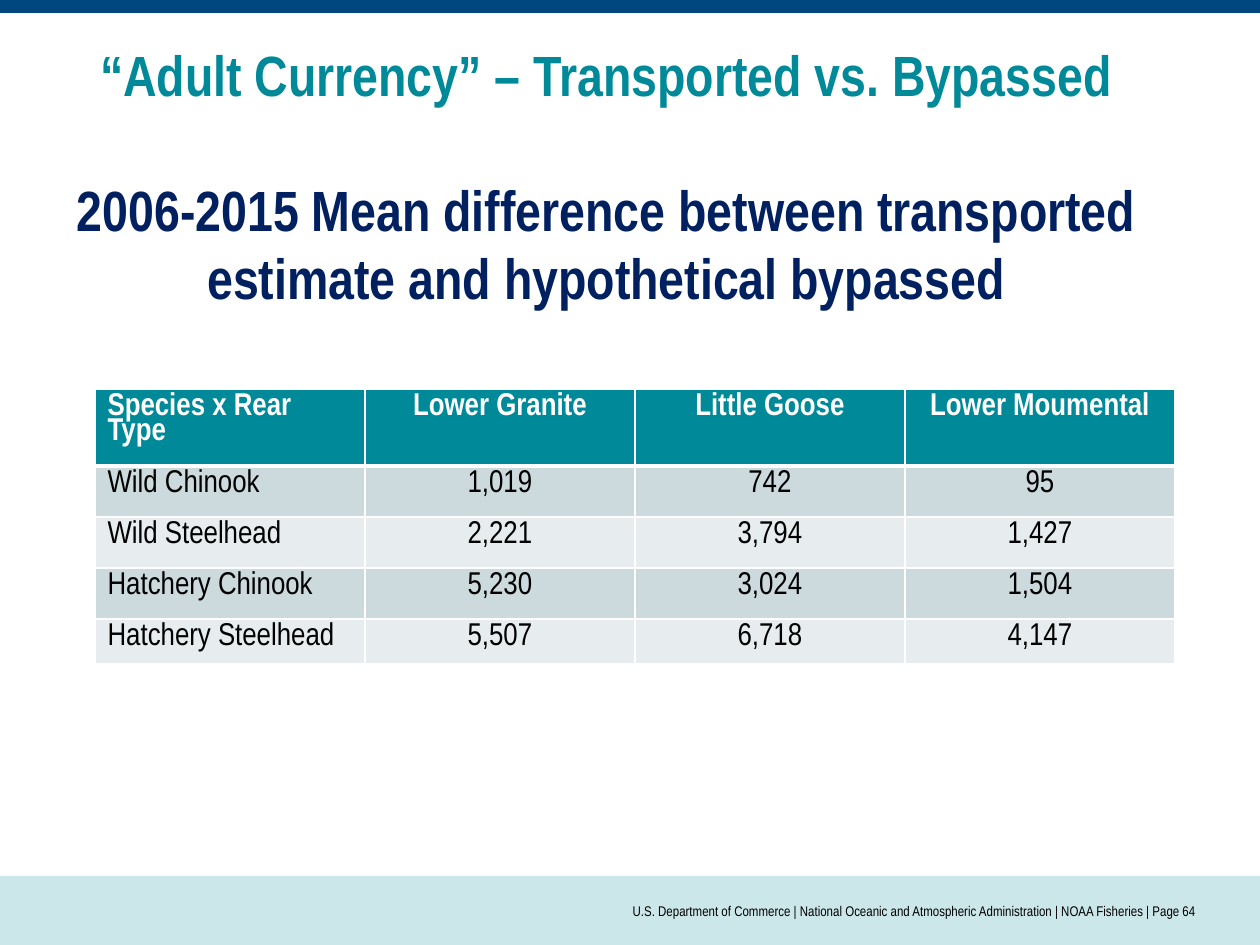
from lxml import etree
from pptx import Presentation
from pptx import util as u
from pptx.dml.color import RGBColor
from pptx.enum import shapes, text
from pptx.oxml import ns

FONT = "Arial Narrow"
COLORS = {
    "teal": "008998", "navy": "002060", "bar": "00467F", "footer": "CCE7EA",
    "band_dark": "CCDADD", "band_light": "E7EDEF",
    "white": "FFFFFF", "black": "000000",
}
TITLE_PITCH = u.Pt(38.6)
COLUMN_WIDTH = 270
ROW_HEIGHTS = [71, 51, 51, 51, 42]
ROWS = [
    ["Species x Rear Type", "Lower Granite", "Little Goose", "Lower Moumental"],
    ["Wild Chinook", "1,019", "742", "95"],
    ["Wild Steelhead", "2,221", "3,794", "1,427"],
    ["Hatchery Chinook", "5,230", "3,024", "1,504"],
    ["Hatchery Steelhead", "5,507", "6,718", "4,147"],
]


def px(length):
    return u.Emu(round(length * 914400 / 126))


def box(left, top, width, height):
    return px(left), px(top), px(width), px(height)


def color(name):
    return RGBColor.from_string(COLORS[name])


def format_paragraph(paragraph, size, color_name, alignment, bold=False):
    paragraph.alignment = alignment
    for run in paragraph.runs:
        run.font.name = FONT
        run.font.size = u.Pt(size)
        run.font.bold = bold
        run.font.color.rgb = color(color_name)


def add_band(slide, bounds, color_name):
    shape = slide.shapes.add_shape(shapes.MSO_SHAPE.RECTANGLE, *box(*bounds))
    shape.shadow.inherit = False
    shape.fill.solid()
    shape.fill.fore_color.rgb = color(color_name)
    shape.line.fill.background()


def set_title(slide, bounds, lines):
    title = slide.shapes.title
    title.left, title.top, title.width, title.height = box(*bounds)
    frame = title.text_frame
    frame.text = "\n".join(line for line, _ in lines)
    frame.word_wrap = True
    frame.auto_size = text.MSO_AUTO_SIZE.NONE
    frame.vertical_anchor = text.MSO_ANCHOR.TOP
    for index, (_, color_name) in enumerate(lines):
        paragraph = frame.paragraphs[index]
        paragraph.line_spacing = TITLE_PITCH
        paragraph.space_before = TITLE_PITCH if index else u.Pt(0)
        format_paragraph(paragraph, 32.4, color_name, text.PP_ALIGN.CENTER, True)


def add_footer_text(slide, bounds, content):
    frame = slide.shapes.add_textbox(*box(*bounds)).text_frame
    frame.text = content
    frame.word_wrap = True
    frame.margin_left = frame.margin_right = 0
    frame.vertical_anchor = text.MSO_ANCHOR.MIDDLE
    format_paragraph(frame.paragraphs[0], 8, "black", text.PP_ALIGN.RIGHT)


def set_borders(cell, widths):
    properties = cell._tc.get_or_add_tcPr()
    for index, (side, width) in enumerate(widths.items()):
        line = etree.Element(ns.qn(f"a:ln{side}"), w=str(u.Pt(width)))
        fill = etree.SubElement(line, ns.qn("a:solidFill"))
        etree.SubElement(fill, ns.qn("a:srgbClr"), val=COLORS["white"])
        properties.insert(index, line)


def format_cell(cell, row, column):
    header = row == 0
    fill_name = "teal" if header else ("band_dark" if row % 2 else "band_light")
    cell.fill.solid()
    cell.fill.fore_color.rgb = color(fill_name)
    # The rule under the header is thicker than the rest
    set_borders(cell, {"L": 1, "R": 1, "T": 3 if row == 1 else 1,
                       "B": 3 if header else 1})
    paragraph = cell.text_frame.paragraphs[0]
    paragraph.line_spacing = 0.85
    alignment = text.PP_ALIGN.CENTER if column else text.PP_ALIGN.LEFT
    format_paragraph(paragraph, 18, "white" if header else "black", alignment, header)


def add_data_table(slide, left, top):
    columns = len(ROWS[0])
    bounds = box(left, top, COLUMN_WIDTH * columns, sum(ROW_HEIGHTS))
    table = slide.shapes.add_table(len(ROWS), columns, *bounds).table
    for column in table.columns:
        column.width = px(COLUMN_WIDTH)
    for row, values in enumerate(ROWS):
        table.rows[row].height = px(ROW_HEIGHTS[row])
        for column, value in enumerate(values):
            cell = table.cell(row, column)
            cell.text = value
            format_cell(cell, row, column)


def main():
    presentation = Presentation()
    presentation.slide_width, presentation.slide_height = px(1260), px(945)
    slide = presentation.slides.add_slide(presentation.slide_layouts[5])

    # Top and bottom bands
    add_band(slide, (0, 876, 1260, 69), "footer")
    add_band(slide, (0, 0, 1260, 13), "bar")
    add_footer_text(slide, (315, 876, 882, 69),
                    "U.S. Department of Commerce | National Oceanic and "
                    "Atmospheric Administration | NOAA Fisheries | Page 64")

    # Title and subtitle
    set_title(slide, (63, 34, 1087, 281), [
        ("“Adult Currency” – Transported vs. Bypassed", "teal"),
        ("2006-2015 Mean difference between transported estimate and "
         "hypothetical bypassed", "navy"),
    ])

    # Differences by species and dam
    add_data_table(slide, 95, 389)
    presentation.save("out.pptx")


if __name__ == "__main__":
    main()
